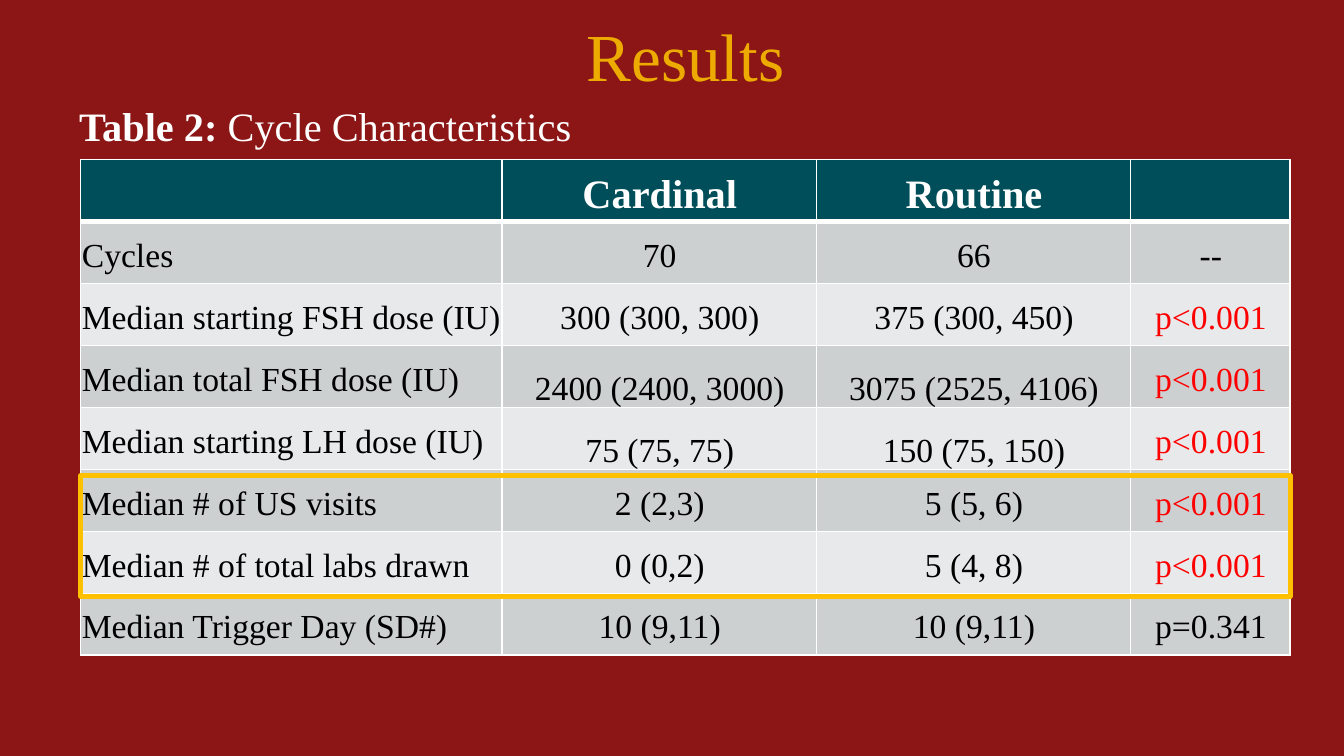
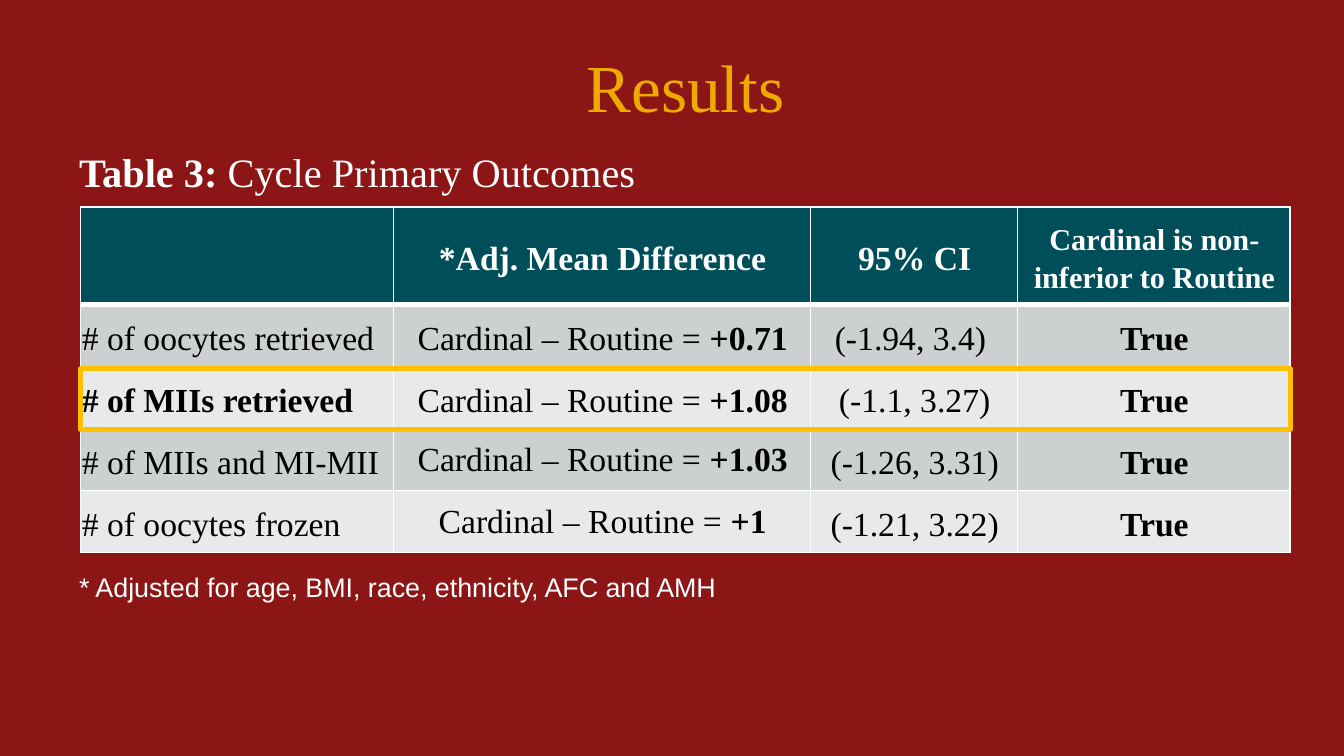
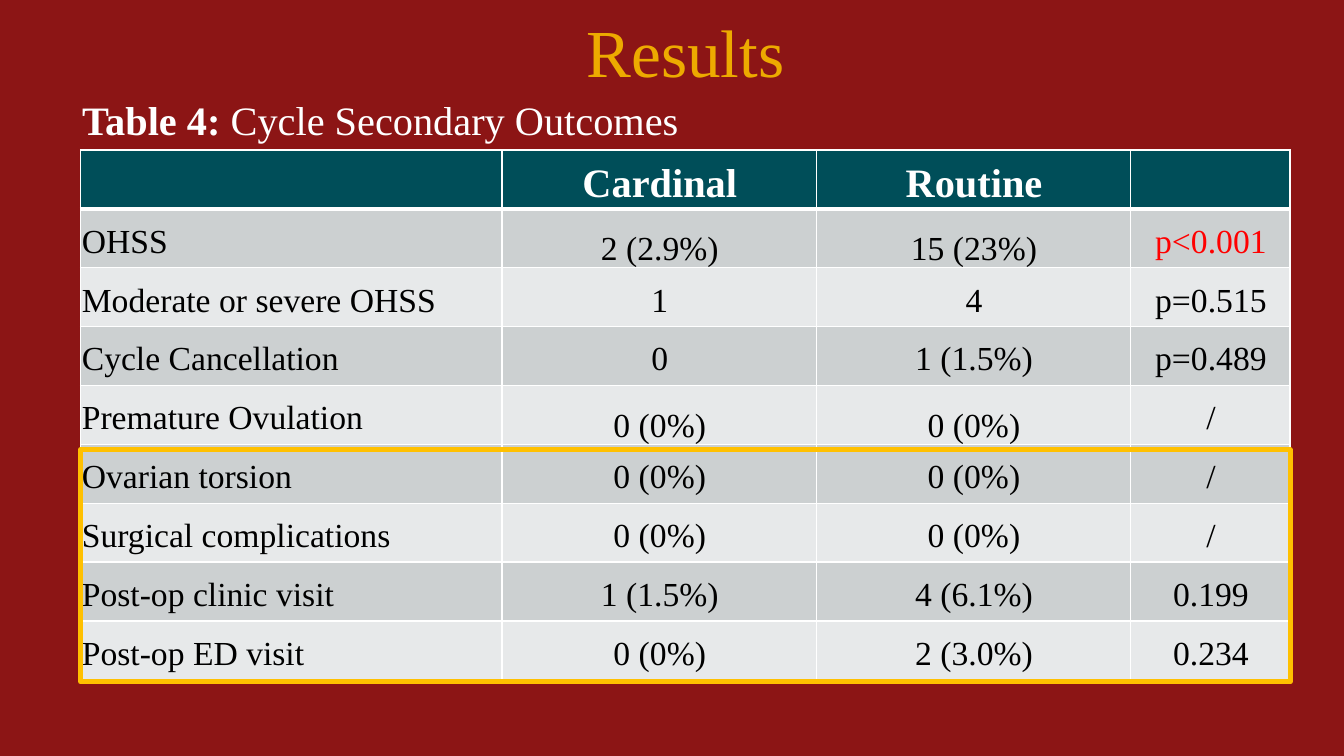
from lxml import etree
from pptx import Presentation
from pptx.dml.color import RGBColor
from pptx.enum.shapes import MSO_SHAPE
from pptx.enum.text import MSO_ANCHOR, PP_ALIGN
from pptx.oxml.ns import qn
from pptx.util import Inches, Pt

RECT = MSO_SHAPE.RECTANGLE
LEFT, CENTER = PP_ALIGN.LEFT, PP_ALIGN.CENTER
TOP, MIDDLE, BOTTOM = MSO_ANCHOR.TOP, MSO_ANCHOR.MIDDLE, MSO_ANCHOR.BOTTOM

# Shared look
SERIF, SANS = "Times New Roman", "Arial"
RED, GOLD, AMBER, TEAL = "8C1515", "EDAA00", "FFC000", "004E59"
WHITE, BLACK, SIGNIFICANT = "FFFFFF", "000000", "FF0000"
BANDS = ("CCD0D1", "E7E9EA")

# Layout in percent of the slide's width or height
W, H = Inches(11.11), Inches(6.25)
TEXT_X, TEXT_W = 5, 92
TABLE_X, TABLE_W = 6, 90
TITLE_H, CAPTION_H = 12, 8
GROUP_COLS = (34.84, 25.98, 25.98, 13.2)  # percent of the table's width


def color(hex_string):
    return RGBColor.from_string(hex_string)


def place(x, y, w, h):
    return [int(v * side / 100) for v, side in ((x, W), (y, H), (w, W), (h, H))]


def write(p, text, size, font, hex_color, bold=False):
    """Fill a paragraph; parts between ** marks turn bold."""
    for i, part in enumerate(text.split("**")):
        if part:
            r = p.add_run()
            r.text = part
            r.font.name, r.font.size = font, Pt(size)
            r.font.bold = bold or i % 2 == 1
            r.font.color.rgb = color(hex_color)


def add_text(s, box, text, size, font, hex_color, align=LEFT, anchor=TOP):
    tf = s.shapes.add_textbox(*place(*box)).text_frame
    tf.word_wrap, tf.vertical_anchor = True, anchor
    p = tf.paragraphs[0]
    p.alignment = align
    write(p, text, size, font, hex_color)
    return p


def add_results_slide(prs, title_y, caption_y, caption, caption_x=TEXT_X):
    s = prs.slides.add_slide(prs.slide_layouts[6])
    s.background.fill.solid()
    s.background.fill.fore_color.rgb = color(RED)
    add_text(s, (TEXT_X, title_y, TEXT_W, TITLE_H), "Results", 40, SERIF, GOLD,
             CENTER, MIDDLE)
    p = add_text(s, (caption_x, caption_y, TEXT_W, CAPTION_H), caption, 24,
                 SERIF, WHITE)
    p.line_spacing = 0.9
    return s


def set_borders(cell, top, bottom):
    tcPr = cell._tc.get_or_add_tcPr()
    for side, width in (("L", 1), ("R", 1), ("T", top), ("B", bottom)):
        ln = etree.SubElement(tcPr, qn(f"a:ln{side}"), w=str(Pt(width)))
        fill = etree.SubElement(ln, qn("a:solidFill"))
        etree.SubElement(fill, qn("a:srgbClr"), val=WHITE)


def add_results_table(s, y, h, cols, rows, sizes, header_h=None,
                      single=(), single_anchor=BOTTOM):
    """Draw the table; cells in single are single-spaced."""
    header_h = header_h or h / len(rows)
    row_h = (h - header_h) / (len(rows) - 1)
    frame = s.shapes.add_table(len(rows), len(cols),
                               *place(TABLE_X, y, TABLE_W, h))
    table = frame.table
    table.horz_banding = False
    for column, share in zip(table.columns, cols):
        column.width = int(W * TABLE_W / 100 * share / 100)
    for i, texts in enumerate(rows):
        header = i == 0
        table.rows[i].height = int(H * (header_h if header else row_h) / 100)
        for j, text in enumerate(texts):
            cell = table.cell(i, j)
            set_borders(cell, 3 if i == 1 else 1, 3 if header else 1)
            cell.fill.solid()
            cell.fill.fore_color.rgb = color(TEAL if header else BANDS[(i - 1) % 2])
            cell.margin_left = cell.margin_top = Inches(0.01)
            cell.margin_right = cell.margin_bottom = 0
            tight = (i, j) in single
            cell.vertical_anchor = single_anchor if tight else MIDDLE
            p = cell.text_frame.paragraphs[0]
            p.alignment = CENTER if header or j else LEFT
            p.line_spacing = 1 if tight else 1.15
            if header:
                write(p, text, sizes[j], SERIF, WHITE, bold=True)
            else:
                ink = SIGNIFICANT if text == "p<0.001" else BLACK
                write(p, text, 20, SERIF, ink)


def add_highlight(s, y, h):
    sp = s.shapes.add_shape(RECT, *place(TABLE_X, y, TABLE_W, h))
    sp.shadow.inherit = False
    sp.fill.background()
    sp.line.color.rgb = color(AMBER)
    sp.line.width = Pt(3)


# Table contents
GROUP_HEADER = ("", "Cardinal", "Routine", "")
CHARACTERISTICS = (
    GROUP_HEADER,
    ("Cycles", "70", "66", "--"),
    ("Median starting FSH dose (IU)", "300 (300, 300)", "375 (300, 450)", "p<0.001"),
    ("Median total FSH dose (IU)", "2400 (2400, 3000)", "3075 (2525, 4106)", "p<0.001"),
    ("Median starting LH dose (IU)", "75 (75, 75)", "150 (75, 150)", "p<0.001"),
    ("Median # of US visits", "2 (2,3)", "5 (5, 6)", "p<0.001"),
    ("Median # of total labs drawn", "0 (0,2)", "5 (4, 8)", "p<0.001"),
    ("Median Trigger Day (SD#)", "10 (9,11)", "10 (9,11)", "p=0.341"),
)
DIFFERENCES = (
    ("# of oocytes retrieved", "+0.71", "(-1.94, 3.4) "),
    ("**# of MIIs retrieved**", "+1.08", "(-1.1, 3.27)"),
    ("# of MIIs and MI-MII", "+1.03", "(-1.26, 3.31)"),
    ("# of oocytes frozen", "+1", "(-1.21, 3.22)"),
)
PRIMARY = [("", "*Adj. Mean Difference", "95% CI", "Cardinal is non-inferior to Routine")]
PRIMARY += [(name, f"Cardinal – Routine = **{diff}**", ci, "**True**")
            for name, diff, ci in DIFFERENCES]
SECONDARY = (
    GROUP_HEADER,
    ("OHSS", "2 (2.9%)", "15 (23%)", "p<0.001"),
    ("Moderate or severe OHSS", "1", "4", "p=0.515"),
    ("Cycle Cancellation", "0", "1 (1.5%)", "p=0.489"),
    ("Premature Ovulation", "0 (0%)", "0 (0%)", "/"),
    ("Ovarian torsion", "0 (0%)", "0 (0%)", "/"),
    ("Surgical complications", "0 (0%)", "0 (0%)", "/"),
    ("Post-op clinic visit", "1 (1.5%)", "4 (6.1%)", "0.199"),
    ("Post-op ED visit", "0 (0%)", "2 (3.0%)", "0.234"),
)


def main():
    prs = Presentation()
    prs.slide_width, prs.slide_height = W, H

    # Cycle characteristics
    s = add_results_slide(prs, 1.2, 13.3, "**Table 2: **Cycle Characteristics")
    add_results_table(s, 21.1, 65.6, GROUP_COLS, CHARACTERISTICS, [24] * 4,
                      single=((3, 1), (3, 2), (4, 1), (4, 2)))
    add_highlight(s, 62.9, 16)

    # Primary outcomes
    s = add_results_slide(prs, 5.3, 19.4, "**Table 3: **Cycle Primary Outcomes")
    add_results_table(s, 27.4, 45.7, (25.86, 34.5, 17.1, 22.54), PRIMARY,
                      (20, 20, 20, 18), header_h=12.9,
                      single=((3, 1), (4, 1)), single_anchor=MIDDLE)
    add_text(s, (TEXT_X, 74.7, TABLE_W, 5.9),
             "* Adjusted for age, BMI, race, ethnicity, AFC and AMH", 16, SANS, WHITE)
    add_highlight(s, 48.8, 8)

    # Secondary outcomes
    s = add_results_slide(prs, 0.7, 12.5, "**Table 4: **Cycle Secondary Outcomes",
                          caption_x=5.22)
    add_results_table(s, 19.85, 70.1, GROUP_COLS, SECONDARY, [24] * 4,
                      single=((1, 1), (1, 2), (4, 1), (4, 2)))
    add_highlight(s, 59.5, 30.7)

    prs.save("out.pptx")


if __name__ == "__main__":
    main()
